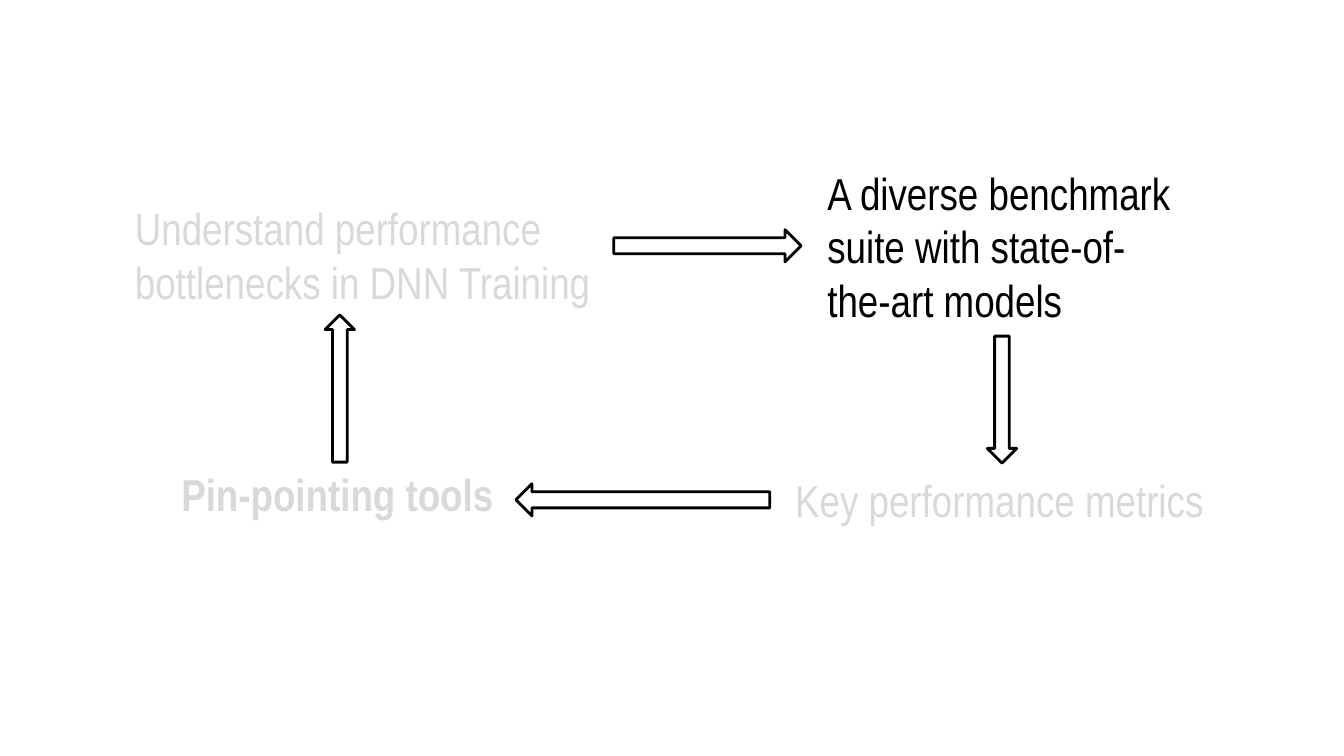
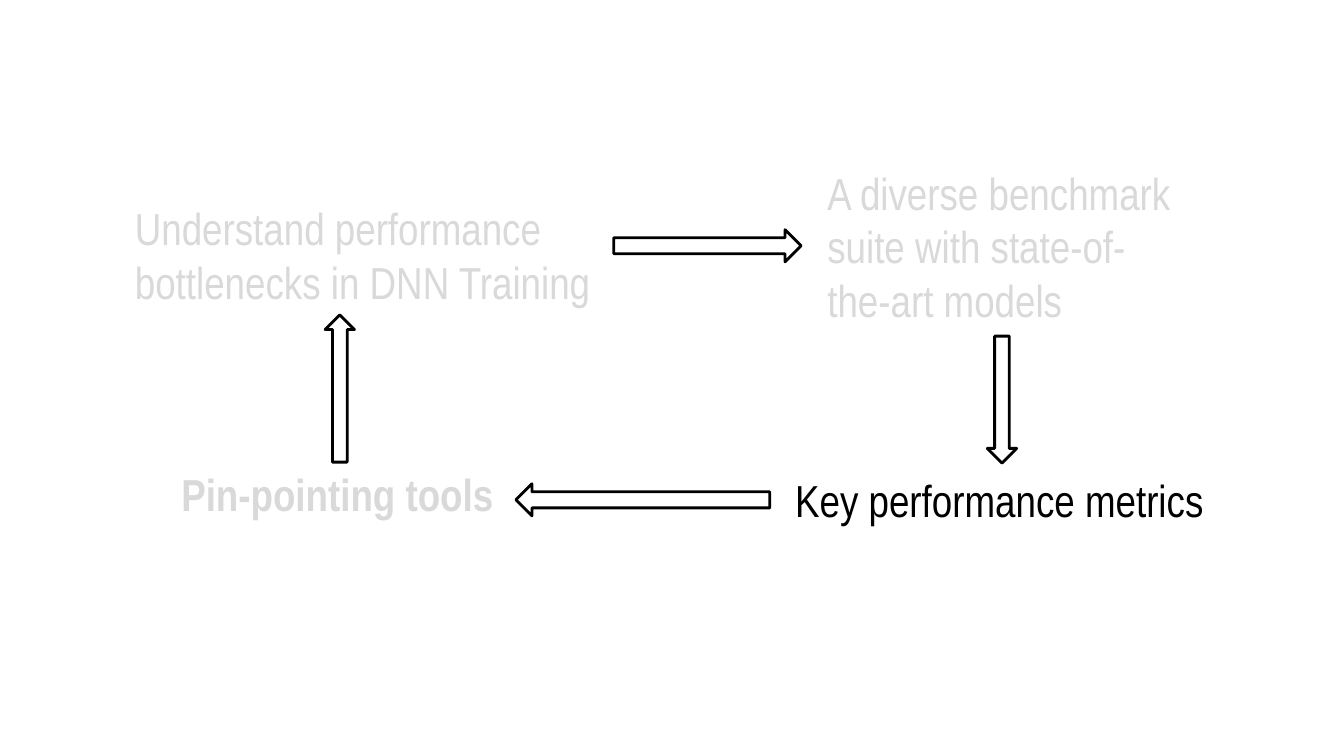
from pptx import Presentation
from pptx.dml.color import RGBColor
from pptx.enum.shapes import MSO_SHAPE
from pptx.enum.text import MSO_AUTO_SIZE
from pptx.util import Cm, Pt

FONT = "Arial Narrow"
BLACK, WHITE, FADED = "000000", "FFFFFF", "D9D9D9"

BENCHMARK = "A diverse benchmark suite with state-of-the-art models"
METRICS = "Key performance metrics"

# text, left, top, width, height in cm, bold
STEPS = [
    ("Understand performance bottlenecks in DNN Training", 3.15, 4.93, 12.07, 3, False),
    ("Pin-pointing tools", 4.32, 11.63, 8.53, 1.63, True),
    (BENCHMARK, 20.6, 4.04, 9.3, 4.37, False),
    (METRICS, 19.79, 11.79, 10.92, 1.63, False),
]

# left, top, length, thickness in cm before rotation; each arrow turns 90° further
ARROWS = [
    (15.47, 5.79, 4.72, 0.81),
    (23.65, 9.7, 3.2, 0.74),
    (13, 12.19, 6.4, 0.81),
    (6.71, 9.42, 3.71, 0.74),
]


def paint(color_format, color):
    color_format.rgb = RGBColor.from_string(color)


deck = Presentation()
deck.slide_width, deck.slide_height = Cm(33.87), Cm(19.05)
blank = deck.slide_layouts[6]

for active_step in (BENCHMARK, METRICS):
    page = deck.slides.add_slide(blank)

    for text, *bounds, bold in STEPS:
        box = page.shapes.add_textbox(*map(Cm, bounds))
        frame = box.text_frame
        frame.word_wrap = True
        frame.auto_size = MSO_AUTO_SIZE.SHAPE_TO_FIT_TEXT
        frame.text = text
        font = frame.paragraphs[0].runs[0].font
        font.name, font.size, font.bold = FONT, Pt(32), bold
        paint(font.color, BLACK if text == active_step else FADED)

    for turn, bounds in enumerate(ARROWS):
        arrow = page.shapes.add_shape(MSO_SHAPE.RIGHT_ARROW, *map(Cm, bounds))
        arrow.rotation = 90 * turn
        arrow.shadow.inherit = False
        arrow.fill.solid()
        paint(arrow.fill.fore_color, WHITE)
        paint(arrow.line.color, BLACK)
        arrow.line.width = Pt(2)

deck.save("out.pptx")
